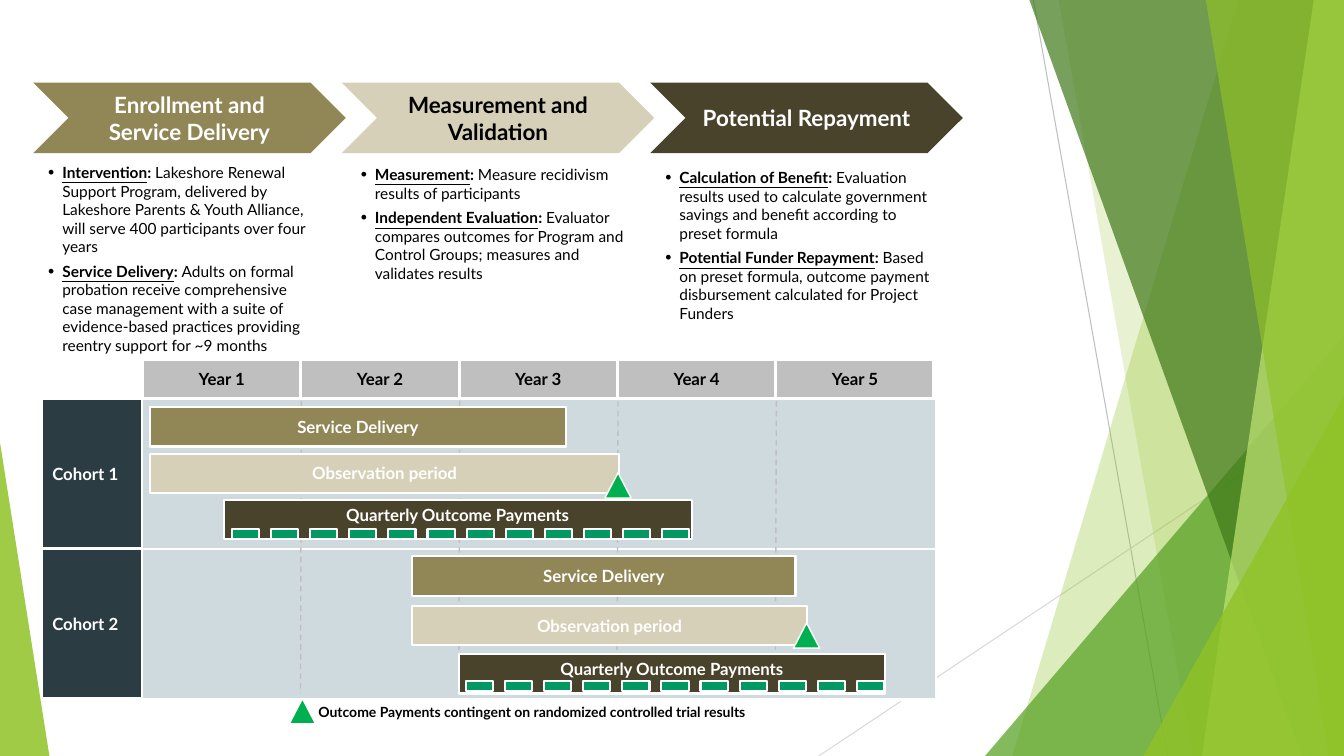
import dataclasses

import pptx
import pptx.dml.color
import pptx.enum.dml
import pptx.enum.shapes
import pptx.enum.text
import pptx.oxml
import pptx.oxml.ns
import pptx.util

Inches = pptx.util.Inches
Pt = pptx.util.Pt
Shape = pptx.enum.shapes.MSO_SHAPE
Align = pptx.enum.text.PP_ALIGN
Anchor = pptx.enum.text.MSO_ANCHOR


@dataclasses.dataclass(frozen=True)
class Theme:
    font: str = "Lato"
    white: str = "FFFFFF"
    black: str = "000000"
    olive: str = "918655"
    sand: str = "D6D0B8"
    umber: str = "48432A"
    slate: str = "2C3C43"
    mist: str = "CFDADF"
    gray: str = "BFBFBF"
    pale_gray: str = "D9D9D9"
    marker: str = "00B050"
    payment: str = "009961"
    lime: str = "90C226"
    light_lime: str = "C0E474"
    green: str = "54A021"
    forest: str = "3F7819"
    heading: float = 16
    label: float = 12
    body: float = 11
    legend: float = 10


def color(value):
    return pptx.dml.color.RGBColor.from_string(value)


def write(para, text, *, theme, size, ink, bold=True, underline=False):
    span = para.add_run()
    span.text = text
    span.font.name = theme.font
    span.font.size = Pt(size)
    span.font.color.rgb = color(ink)
    span.font.bold = bold
    span.font.underline = underline


class Painter:
    def __init__(self, page, theme):
        self.page = page
        self.theme = theme

    def finish(self, shape, fill, line=None, opacity=100):
        shape.shadow.inherit = False
        shape.fill.solid()
        shape.fill.fore_color.rgb = color(fill)
        if opacity < 100:
            tint = shape.fill._xPr.find(".//" + pptx.oxml.ns.qn("a:srgbClr"))
            tint.append(pptx.oxml.parse_xml(
                f'<a:alpha {pptx.oxml.ns.nsdecls("a")} val="{opacity * 1000}"/>'))
        if line:
            shape.line.color.rgb = color(self.theme.white)
            shape.line.width = Pt(line)
        else:
            shape.line.fill.background()

    def shape(self, kind, left, top, width, height, fill, line=None, opacity=100, tip=None):
        shape = self.page.shapes.add_shape(
            kind, Inches(left), Inches(top), Inches(width), Inches(height))
        self.finish(shape, fill, line, opacity)
        if tip is not None:
            shape.adjustments[0] = tip
        return shape

    def facet(self, points, fill, opacity):
        corners = [(Inches(x), Inches(y)) for x, y in points]
        builder = self.page.shapes.build_freeform(*corners[0], scale=1.0)
        builder.add_line_segments(corners[1:], close=True)
        self.finish(builder.convert_to_shape(), fill, opacity=opacity)

    def line(self, start, end, ink, width, dashed=False):
        line = self.page.shapes.add_connector(
            pptx.enum.shapes.MSO_CONNECTOR.STRAIGHT, *map(Inches, start + end))
        line.line.color.rgb = color(ink)
        line.line.width = Pt(width)
        if dashed:
            line.line.dash_style = pptx.enum.dml.MSO_LINE.DASH
        line._element.spPr.append(pptx.oxml.parse_xml(
            f'<a:effectLst {pptx.oxml.ns.nsdecls("a")}/>'))

    def label(self, shape, text, *, size=None, ink=None, align=Align.CENTER,
              anchor=Anchor.MIDDLE, inset=True):
        frame = shape.text_frame
        frame.word_wrap = True
        frame.vertical_anchor = anchor
        if not inset:
            frame.margin_left = frame.margin_right = frame.margin_top = frame.margin_bottom = 0
        para = frame.paragraphs[0]
        para.alignment = align
        write(para, text, theme=self.theme, size=size or self.theme.label,
              ink=ink or self.theme.white)

    def text_box(self, left, top, width, height):
        box = self.page.shapes.add_textbox(
            Inches(left), Inches(top), Inches(width), Inches(height))
        box.text_frame.word_wrap = True
        return box

    def bullets(self, left, top, height, indent, items):
        frame = self.text_box(left, top, 2.93, height).text_frame
        style = dict(theme=self.theme, size=self.theme.body, ink=self.theme.black)
        for index, (term, detail) in enumerate(items):
            para = frame.add_paragraph() if index else frame.paragraphs[0]
            para.space_before = Pt(4.5)
            props = para._p.get_or_add_pPr()
            props.set("marL", str(Inches(indent)))
            props.set("indent", str(Inches(-0.14)))
            for tag in ('buSzPct {} val="115000"', 'buFont {} typeface="Arial"', 'buChar {} char="•"'):
                props.append(pptx.oxml.parse_xml(
                    "<a:" + tag.format(pptx.oxml.ns.nsdecls("a")) + "/>"))
            write(para, term, underline=True, **style)
            write(para, ": ", **style)
            write(para, detail, bold=False, **style)

    def marker(self, left, top):
        self.shape(Shape.ISOSCELES_TRIANGLE, left, top, 0.26, 0.25, self.theme.marker, 1)

    def bar(self, left, top, width, text, fill, **format):
        bar = self.shape(Shape.RECTANGLE, left, top, width, 0.39, fill, 1.5)
        self.label(bar, text, **format)


def draw_backdrop(painter):
    theme = painter.theme
    right, bottom = 13.33, 7.5
    painter.line((10.25, 0), (11.58, bottom), theme.gray, 0.75)
    painter.line((right, 4.03), (8.12, bottom), theme.pale_gray, 0.75)

    def facet(top_x, bottom_x, fill, opacity):
        painter.facet([(top_x, 0), (right, 0), (right, bottom), (bottom_x, bottom)], fill, opacity)

    def corner(left, top, width, fill, opacity, tip):
        painter.shape(Shape.ISOSCELES_TRIANGLE, left, top, width, bottom - top,
                      fill, opacity=opacity, tip=tip)

    facet(12.28, 10.04, theme.lime, 30)
    facet(10.5, 11.83, theme.lime, 20)
    corner(9.77, 3.33, 3.56, theme.green, 72, 1)
    facet(10.21, 12.91, theme.forest, 70)
    facet(13.03, 11.92, theme.light_lime, 70)
    facet(11.96, 13.18, theme.lime, 65)
    corner(11.34, 3.93, 1.99, theme.lime, 80, 1)
    corner(0, 4.39, 0.49, theme.lime, 85, 0)


def draw_phases(painter):
    theme = painter.theme
    phases = [
        ("Enrollment and Service Delivery", theme.olive, theme.white, 1.57, 1.64, 0.19, [
            ("Intervention", "Lakeshore Renewal Support Program, delivered by Lakeshore Parents & Youth Alliance, will serve 400 participants over four years"),
            ("Service Delivery", "Adults on formal probation receive comprehensive case management with a suite of evidence-based practices providing reentry support for ~9 months")]),
        ("Measurement and Validation", theme.sand, theme.black, 1.59, 1.64, 0.23, [
            ("Measurement", "Measure recidivism results of participants"),
            ("Independent Evaluation", "Evaluator compares outcomes for Program and Control Groups; measures and validates results")]),
        ("Potential Repayment", theme.umber, theme.white, 1.62, 0.99, 0.19, [
            ("Calculation of Benefit", "Evaluation results used to calculate government savings and benefit according to preset formula"),
            ("Potential Funder Repayment", "Based on preset formula, outcome payment disbursement calculated for Project Funders")]),
    ]
    for index, (title, fill, ink, top, height, indent, items) in enumerate(phases):
        left = 0.33 + 3.06 * index
        chevron = painter.shape(Shape.CHEVRON, left, 0.82, 3.1, 0.7, fill)
        painter.label(chevron, title, size=theme.heading, ink=ink)
        painter.bullets(left, top, height, indent, items)


def draw_timeline(painter):
    theme = painter.theme
    row_tops = (3.96, 5.45)
    for number, top in enumerate(row_tops, 1):
        painter.shape(Shape.RECTANGLE, 0.42, top, 8.86, 1.49, theme.mist, 1.5)
        head = painter.shape(Shape.RECTANGLE, 0.42, top, 0.99, 1.48, theme.slate, 1.5)
        painter.label(head, f"Cohort {number}", align=Align.LEFT)
    for year in range(5):
        left = 1.42 + 1.57 * year
        if year:
            painter.line((left, 3.98), (left - 0.01, 6.88), theme.gray, 1, dashed=True)
        head = painter.shape(Shape.RECTANGLE, left, 3.57, 1.56, 0.38, theme.gray, 1.5)
        painter.label(head, f"Year {year + 1}", ink=theme.black, inset=False)

    cohorts = [
        ((1.49, 4.04, 4.12), (1.49, 4.5, 4.65), (2.22, 4.96, 4.64), (6, 4.69), (2.3, 5.25, 12)),
        ((4.09, 5.52, 3.8), (4.09, 6.01, 3.91), (4.55, 6.49, 4.23), (7.87, 6.18), (4.62, 6.76, 11)),
    ]
    for service, observation, payments, marker, (first, top, count) in cohorts:
        painter.bar(*service, "Service Delivery", theme.olive, inset=False)
        painter.bar(*observation, "Observation period", theme.sand)
        painter.bar(*payments, "Quarterly Outcome Payments", theme.umber, anchor=Anchor.TOP)
        painter.marker(*marker)
        for quarter in range(count):
            painter.shape(Shape.RECTANGLE, first + 3.88 * quarter / 10, top, 0.27, 0.1,
                          theme.payment, 1.5)

    painter.marker(2.87, 6.93)
    legend = painter.text_box(3.06, 6.95, 4.91, 0.22)
    painter.label(legend, "Outcome Payments contingent on randomized controlled trial results",
                  size=theme.legend, ink=theme.black, align=Align.LEFT)


def main():
    deck = pptx.Presentation()
    deck.slide_width = Inches(13.33)
    deck.slide_height = Inches(7.5)
    painter = Painter(deck.slides.add_slide(deck.slide_layouts[6]), Theme())
    draw_backdrop(painter)
    draw_phases(painter)
    draw_timeline(painter)
    deck.save("out.pptx")


if __name__ == "__main__":
    main()
